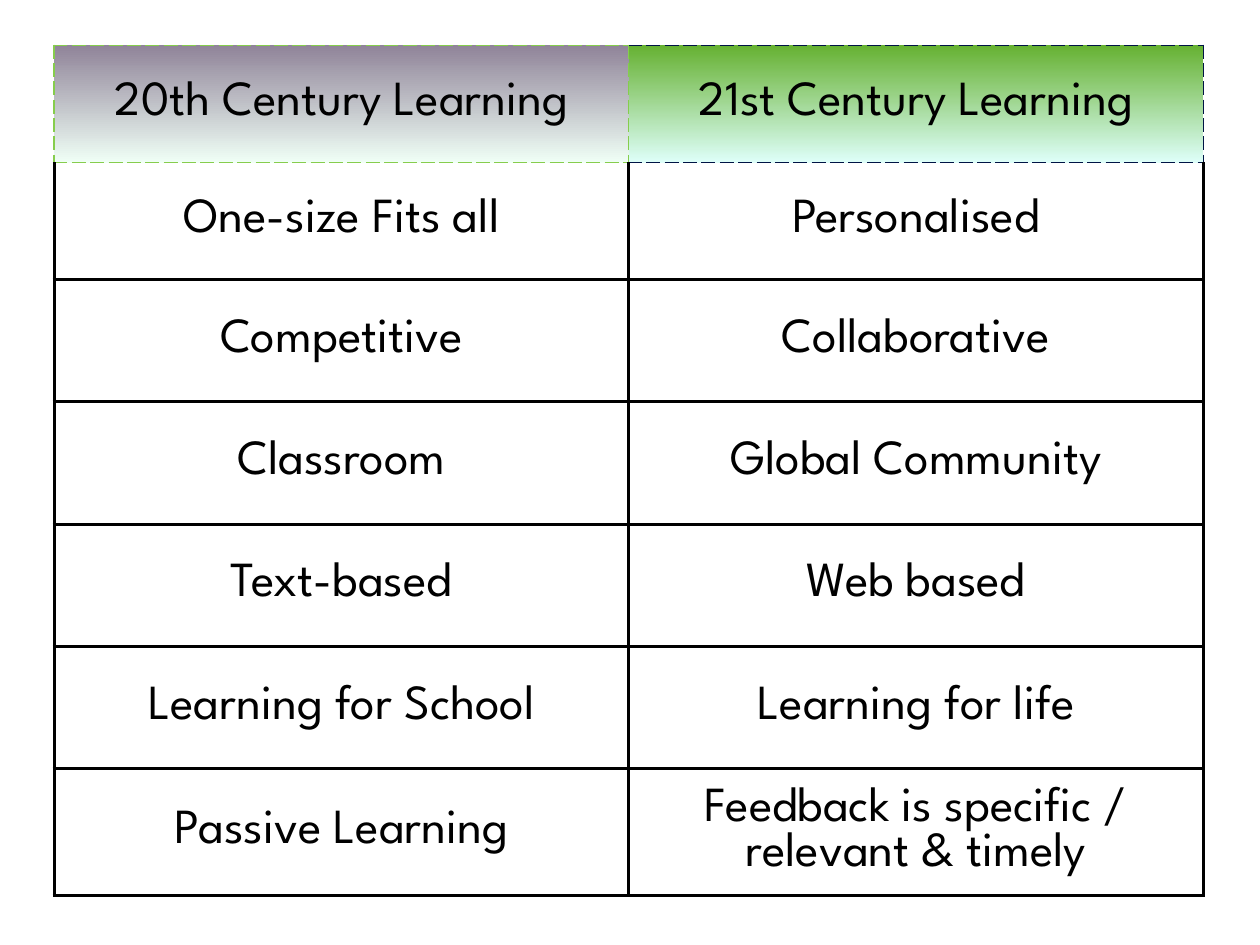
from dataclasses import dataclass

from lxml.etree import SubElement
from pptx import Presentation
from pptx.dml.color import RGBColor
from pptx.enum.text import MSO_ANCHOR, PP_ALIGN
from pptx.oxml.ns import qn
from pptx.util import Inches, Pt


@dataclass(frozen=True)
class Theme:
    font: str = "League Spartan"
    size: int = 28
    ink: str = "000000"
    old_gradient: tuple = ("908499", "F0FFF6")
    new_gradient: tuple = ("66B132", "DEFFF9")
    grid: tuple = ("000000", 2, "solid")
    old_dash: tuple = ("86CD4D", 1, "dash")
    new_dash: tuple = ("001445", 1, "dash")


THEME = Theme()
ROWS = [
    ("20th Century Learning", "21st Century Learning"),
    ("One-size Fits all", "Personalised"),
    ("Competitive", "Collaborative"),
    ("Classroom", "Global Community"),
    ("Text-based", "Web based"),
    ("Learning for School", "Learning for life"),
    ("Passive Learning", "Feedback is specific / relevant & timely"),
]
ROW_HEIGHTS = [0.93] * 2 + [0.97] * 4 + [1.01]
COLUMN_WIDTH = 4.56


def write_cell(cell, text):
    cell.text = text
    margins = {f"margin_{side}": Inches(0.04) for side in ("left", "top", "right", "bottom")}
    for name, value in {**margins, "vertical_anchor": MSO_ANCHOR.MIDDLE}.items():
        setattr(cell, name, value)
    para = cell.text_frame.paragraphs[0]
    para.alignment = PP_ALIGN.CENTER
    font = para.runs[0].font
    for name, value in {"name": THEME.font, "size": Pt(THEME.size), "bold": False}.items():
        setattr(font, name, value)
    font.color.rgb = RGBColor.from_string(THEME.ink)


def border_cell(cell, **sides):
    """Draw the sides L, R, T and B, each a (colour, width, dash); call before filling."""
    properties = cell._tc.get_or_add_tcPr()
    for side in "LRTB":
        color, width, dash = sides[side]
        line = SubElement(properties, qn(f"a:ln{side}"), w=str(Pt(width)))
        fill = SubElement(line, qn("a:solidFill"))
        SubElement(fill, qn("a:srgbClr"), val=color)
        SubElement(line, qn("a:prstDash"), val=dash)


def fill_gradient(cell, colors):
    cell.fill.gradient()
    cell.fill.gradient_angle = 270
    for stop, color in zip(cell.fill.gradient_stops, colors):
        stop.color.rgb = RGBColor.from_string(color)


def add_comparison_table(page):
    frame = page.shapes.add_table(
        len(ROWS), 2, Inches(0.43), Inches(0.36),
        Inches(2 * COLUMN_WIDTH), Inches(sum(ROW_HEIGHTS)),
    )
    table = frame.table
    table.first_row = table.horz_banding = False
    for column in table.columns:
        column.width = Inches(COLUMN_WIDTH)
    for row, height in zip(table.rows, ROW_HEIGHTS):
        row.height = Inches(height)

    dashes = (THEME.old_dash, THEME.new_dash)
    gradients = (THEME.old_gradient, THEME.new_gradient)
    for i, texts in enumerate(ROWS):
        for j, text in enumerate(texts):
            cell = table.cell(i, j)
            write_cell(cell, text)
            if i == 0:
                border_cell(cell, L=THEME.old_dash, R=dashes[j], T=dashes[j], B=dashes[j])
                fill_gradient(cell, gradients[j])
            else:
                top = dashes[j] if i == 1 else THEME.grid
                border_cell(cell, L=THEME.grid, R=THEME.grid, T=top, B=THEME.grid)
                cell.fill.background()


def main():
    deck = Presentation()
    deck.slide_width, deck.slide_height = Inches(10), Inches(7.5)
    page = deck.slides.add_slide(deck.slide_layouts[6])
    add_comparison_table(page)
    deck.save("out.pptx")


if __name__ == "__main__":
    main()
